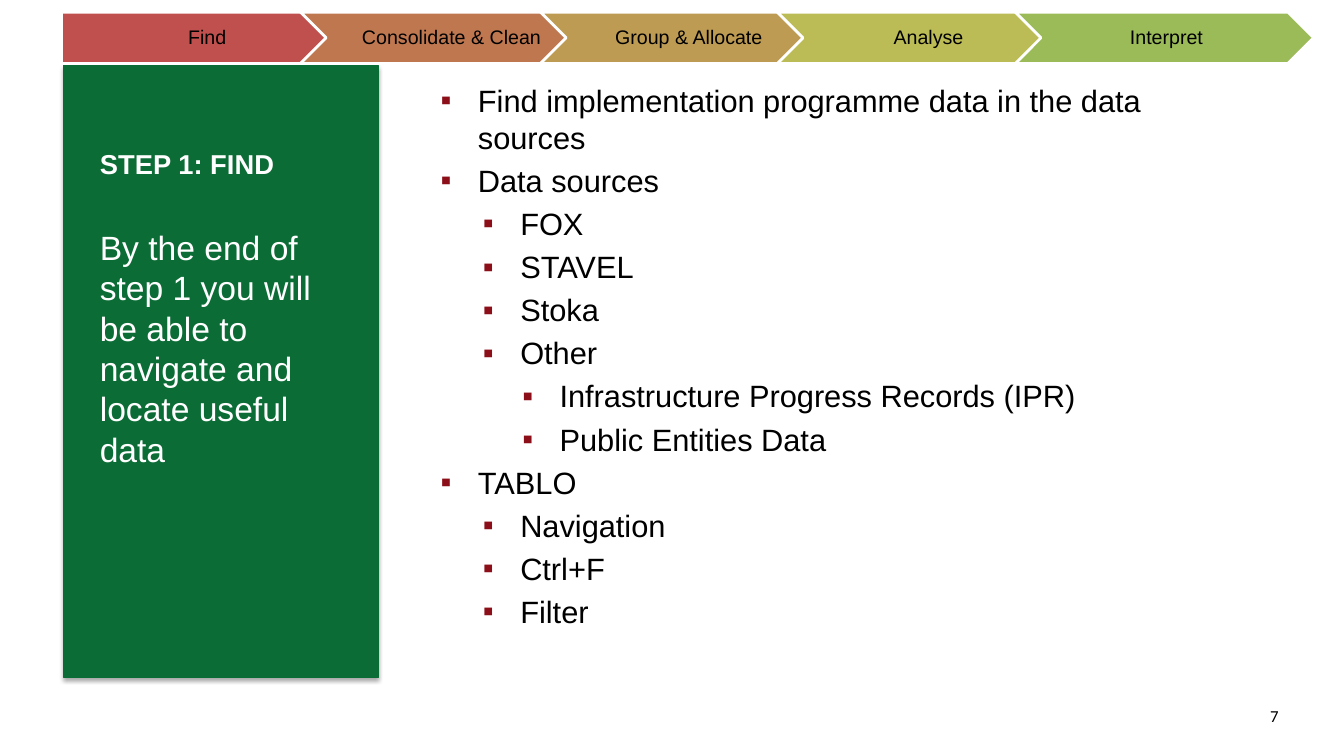
from lxml import etree
from pptx import Presentation
from pptx import util as u
from pptx.dml.color import RGBColor
from pptx.enum import shapes, text
from pptx.oxml import ns

PX = 9144  # EMU per px, 100 px to the inch


def paint(color_format, color):
    color_format.rgb = RGBColor.from_string(color)


def style(para, size, color, name="Arial", bold=False):
    para.font.size = u.Pt(size)
    para.font.name = name
    para.font.bold = bold
    paint(para.font.color, color)


deck = Presentation()
deck.slide_width, deck.slide_height = 1333 * PX, 750 * PX
page = deck.slides.add_slide(deck.slide_layouts.get_by_name("Content with Caption"))
title, body, caption = page.placeholders

for holder, left, top, width, height in [
    (title, 89, 49, 285, 135),
    (body, 427, 76, 787, 557),
    (caption, 89, 220, 253, 336),
]:
    holder.left, holder.top = left * PX, top * PX
    holder.width, holder.height = width * PX, height * PX
    holder.text_frame.auto_size = text.MSO_AUTO_SIZE.NONE

# Green side panel, behind the text
panel = page.shapes.add_shape(
    shapes.MSO_SHAPE.RECTANGLE, 63 * PX, 65 * PX, 312 * PX, 607 * PX)
panel.fill.solid()
paint(panel.fill.fore_color, "0B6C36")
paint(panel.line.color, "086C35")
panel.line.width = u.Pt(0.75)
panel.shadow.inherit = False
effects = panel.element.spPr.find(ns.qn("a:effectLst"))
shadow = etree.SubElement(effects, ns.qn("a:outerShdw"), blurRad="40000",
                          dist="23000", dir="5400000", rotWithShape="0")
shade = etree.SubElement(shadow, ns.qn("a:srgbClr"), val="000000")
etree.SubElement(shade, ns.qn("a:alpha"), val="35000")
title.element.addprevious(panel.element)

# Step title and its goal
title.text_frame.text = "STEP 1: FIND"
title.text_frame.vertical_anchor = text.MSO_ANCHOR.BOTTOM
style(title.text_frame.paragraphs[0], 19.5, "FFFFFF", bold=True)

caption.text_frame.text = ("By the end of step 1 you will be able to "
                           "navigate and locate useful data")
style(caption.text_frame.paragraphs[0], 24, "FFFFFF")

# Bulleted list
TOPICS = [
    (0, "Find implementation programme data in the data sources"),
    (0, "Data sources"),
    (1, "FOX"),
    (1, "STAVEL"),
    (1, "Stoka"),
    (1, "Other"),
    (2, "Infrastructure Progress Records (IPR)"),
    (2, "Public Entities Data"),
    (0, "TABLO"),
    (1, "Navigation"),
    (1, "Ctrl+F"),
    (1, "Filter"),
]
INDENTS = [37, 79, 118]
body.text_frame.text = "\n".join(topic for _, topic in TOPICS)
for para, (level, _) in zip(body.text_frame.paragraphs, TOPICS):
    para.level = level
    props = para._p.get_or_add_pPr()
    props.set("marL", str(INDENTS[level] * PX))
    props.set("indent", str(-37 * PX))
    bullet_color = etree.SubElement(props, ns.qn("a:buClr"))
    etree.SubElement(bullet_color, ns.qn("a:srgbClr"), val="8B0E18")
    etree.SubElement(props, ns.qn("a:buFont"), typeface="Arial")
    etree.SubElement(props, ns.qn("a:buChar"), char="▪")
    style(para, 22, "000000")

# Process arrows along the top
STEPS = [
    ("Find", 61, "C0504D"),
    ("Consolidate & Clean", 298, "BF7750"),
    ("Group & Allocate ", 536, "BD9B53"),
    ("Analyse", 771, "BCBC56"),
    ("Interpret", 1007, "9BBB59"),
]
for number, (label, left, color) in enumerate(STEPS):
    kind = shapes.MSO_SHAPE.CHEVRON if number else shapes.MSO_SHAPE.PENTAGON
    arrow = page.shapes.add_shape(kind, left * PX, 12 * PX, 296 * PX, 51 * PX)
    arrow.shadow.inherit = False
    arrow.fill.solid()
    paint(arrow.fill.fore_color, color)
    paint(arrow.line.color, "FFFFFF")
    arrow.line.width = u.Pt(2)
    frame = arrow.text_frame
    frame.margin_left, frame.margin_right = (6 if number else 8) * PX, 2 * PX
    frame.margin_top = frame.margin_bottom = 4 * PX
    frame.vertical_anchor = text.MSO_ANCHOR.MIDDLE
    frame.text = label
    para = frame.paragraphs[0]
    para.alignment = text.PP_ALIGN.CENTER
    para.line_spacing = 0.9
    style(para, 14, "000000")

# Page number
number_box = page.shapes.add_textbox(1202 * PX, 695 * PX, 76 * PX, 39 * PX)
number_box.text_frame.word_wrap = True
number_box.text_frame.text = "7"
para = number_box.text_frame.paragraphs[0]
para.alignment = text.PP_ALIGN.RIGHT
style(para, 12, "000000", "Calibri")

deck.save("out.pptx")
